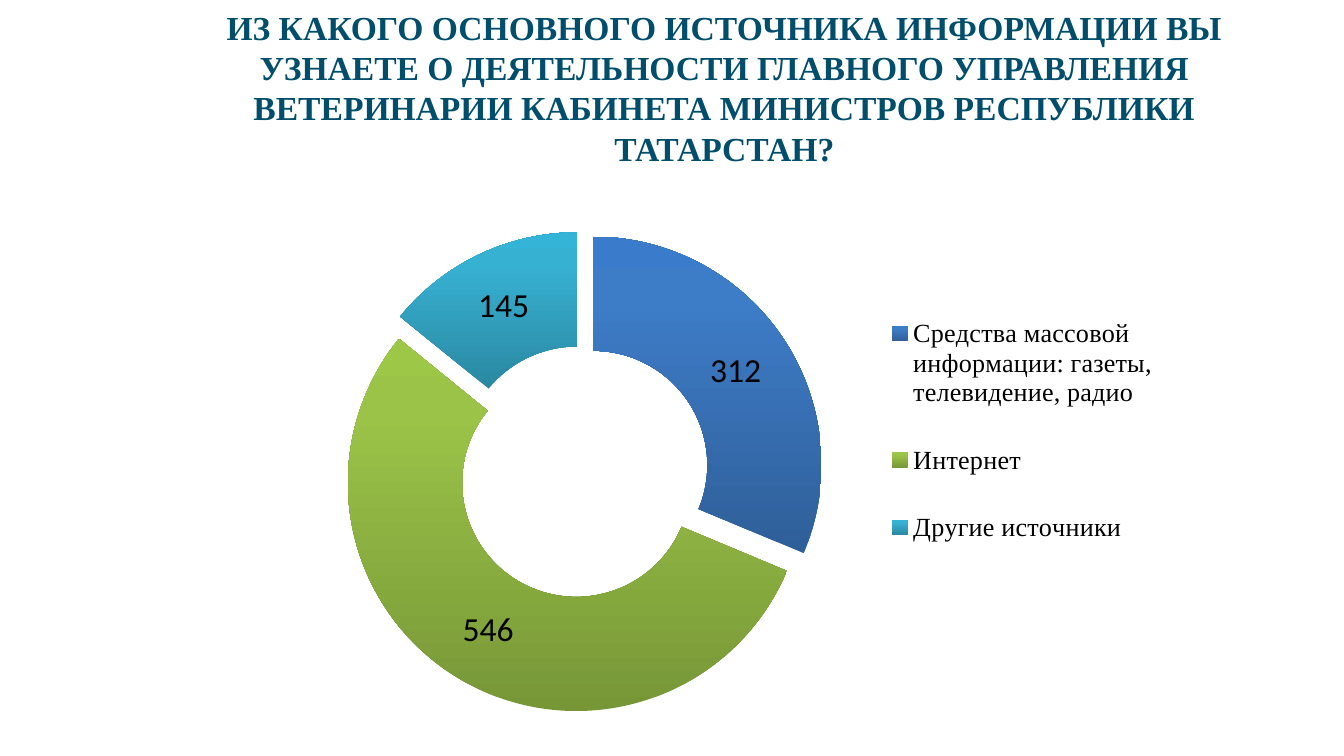
from dataclasses import dataclass

from lxml import etree
from pptx import Presentation
from pptx.chart.data import CategoryChartData
from pptx.dml.color import RGBColor
from pptx.enum.chart import XL_CHART_TYPE, XL_LEGEND_POSITION
from pptx.enum.text import MSO_ANCHOR, MSO_AUTO_SIZE, PP_ALIGN
from pptx.oxml import parse_xml
from pptx.oxml.ns import nsdecls, qn
from pptx.util import Inches, Pt

DOUGHNUT = XL_CHART_TYPE.DOUGHNUT
LEGEND_RIGHT = XL_LEGEND_POSITION.RIGHT
CENTER = PP_ALIGN.CENTER
TOP = MSO_ANCHOR.TOP
NO_AUTOFIT = MSO_AUTO_SIZE.NONE

# Widescreen slide, in inches
WIDTH = 10
HEIGHT = WIDTH * 9 / 16
TITLE_ONLY = 5


@dataclass(frozen=True)
class Theme:
    title_font: str = "Times New Roman"
    chart_font: str = "Calibri"
    title_color: str = "004E6C"
    text_color: str = "000000"
    text_size: int = 18
    legend_size: int = 14
    # Gradient colours of each slice, from bottom to top
    slices: tuple = (
        ("2F5F99", "3D7CC7", "3A7CCB"),
        ("779737", "9BC348", "9DC746"),
        ("2A88A2", "37B1D2", "34B4D6"),
    )
    stops: tuple = (0, 80, 100)


THEME = Theme()

TITLE = (
    "ИЗ КАКОГО ОСНОВНОГО ИСТОЧНИКА ИНФОРМАЦИИ ВЫ УЗНАЕТЕ О ДЕЯТЕЛЬНОСТИ "
    "ГЛАВНОГО УПРАВЛЕНИЯ ВЕТЕРИНАРИИ КАБИНЕТА МИНИСТРОВ РЕСПУБЛИКИ ТАТАРСТАН?"
)
# Source of information, share in percent, number of answers
ANSWERS = (
    ("Средства массовой информации: газеты, телевидение, радио", 31, "312"),
    ("Интернет", 54, "546"),
    ("Другие источники", 14, "145"),
)


def style_font(font, name, size, color, bold=False):
    font.name = name
    font.size = Pt(size)
    font.bold = bold
    font.color.rgb = RGBColor.from_string(color)


def add_title(slide, left, top, width, height):
    shape = slide.shapes.title
    shape.left, shape.top = Inches(left), Inches(top)
    shape.width, shape.height = Inches(width), Inches(height)
    frame = shape.text_frame
    frame.word_wrap = True
    frame.auto_size = NO_AUTOFIT
    frame.vertical_anchor = TOP
    paragraph = frame.paragraphs[0]
    paragraph.alignment = CENTER
    paragraph.line_spacing = 1.0
    run = paragraph.add_run()
    run.text = TITLE
    style_font(run.font, THEME.title_font, THEME.text_size, THEME.title_color, True)


def manual_layout(x, y, width, height, inner=False):
    """Return a chart layout given in shares of the chart's size."""
    target = '<c:layoutTarget val="inner"/>' if inner else ""
    return parse_xml(
        f'<c:layout {nsdecls("c")}><c:manualLayout>{target}'
        '<c:xMode val="edge"/><c:yMode val="edge"/>'
        f'<c:x val="{x}"/><c:y val="{y}"/><c:w val="{width}"/><c:h val="{height}"/>'
        "</c:manualLayout></c:layout>"
    )


def set_layout(parent, layout, index):
    for old in parent.findall(qn("c:layout")):
        parent.remove(old)
    parent.insert(index, layout)


def explosion():
    return parse_xml(f'<c:explosion {nsdecls("c")} val="11"/>')


def fill_slice(properties, colors):
    """Fill a slice with a gradient that runs upwards."""
    fill = properties.find(qn("a:gradFill"))
    for child in list(fill):
        fill.remove(child)
    stop_list = etree.SubElement(fill, qn("a:gsLst"))
    for position, color in zip(THEME.stops, colors):
        stop = etree.SubElement(stop_list, qn("a:gs"), pos=str(position * 1000))
        etree.SubElement(stop, qn("a:srgbClr"), val=color)
    etree.SubElement(fill, qn("a:lin"), ang="16200000", scaled="0")


def label_slice(point, text):
    run = point.data_label.text_frame.paragraphs[0].add_run()
    run.text = text
    style_font(run.font, THEME.chart_font, THEME.text_size, THEME.text_color)


def style_slices(chart):
    plot = chart.plots[0]
    plot.vary_by_categories = True
    plot.has_data_labels = True
    labels = plot.data_labels
    labels.show_percentage = True
    labels.show_value = False
    style_font(labels.font, THEME.chart_font, THEME.text_size, THEME.text_color)

    series = plot.series[0]
    for index, answer in enumerate(ANSWERS):
        point = series.points[index]
        point.format.fill.gradient()
        label_slice(point, answer[2])

    # Colour the slices and pull them apart
    data_points = series._element.findall(qn("c:dPt"))
    data_points[0].addprevious(explosion())
    for data_point, colors in zip(data_points, THEME.slices):
        properties = data_point.find(qn("c:spPr"))
        properties.addprevious(explosion())
        fill_slice(properties, colors)
    plot._element.find(qn("c:holeSize")).set("val", "50")


def add_legend(chart):
    chart.has_legend = True
    legend = chart.legend
    legend.position = LEGEND_RIGHT
    legend.include_in_layout = False
    style_font(legend.font, THEME.title_font, THEME.legend_size, THEME.text_color)
    set_layout(legend._element, manual_layout(0.67, 0.23, 0.32, 0.47), 1)


def add_doughnut(slide, left, top, width, height):
    data = CategoryChartData()
    data.categories = [answer[0] for answer in ANSWERS]
    data.add_series("Series 1", [answer[1] for answer in ANSWERS])
    chart = slide.shapes.add_chart(
        DOUGHNUT, Inches(left), Inches(top), Inches(width), Inches(height), data
    ).chart
    chart.has_title = False
    style_font(chart.font, THEME.chart_font, THEME.text_size, THEME.text_color)
    style_slices(chart)
    add_legend(chart)
    plot_area = chart.plots[0]._element.getparent()
    set_layout(plot_area, manual_layout(0.11, 0.15, 0.51, 0.76, True), 0)


def main():
    presentation = Presentation()
    presentation.slide_width = Inches(WIDTH)
    presentation.slide_height = Inches(HEIGHT)
    slide = presentation.slides.add_slide(presentation.slide_layouts[TITLE_ONLY])

    # Question on top, answers below
    add_title(slide, 1.14, 0, 0.85 * WIDTH, 0.2 * HEIGHT)
    add_doughnut(slide, 1.77, 1, 7.03, 4.74)
    presentation.save("out.pptx")


if __name__ == "__main__":
    main()
